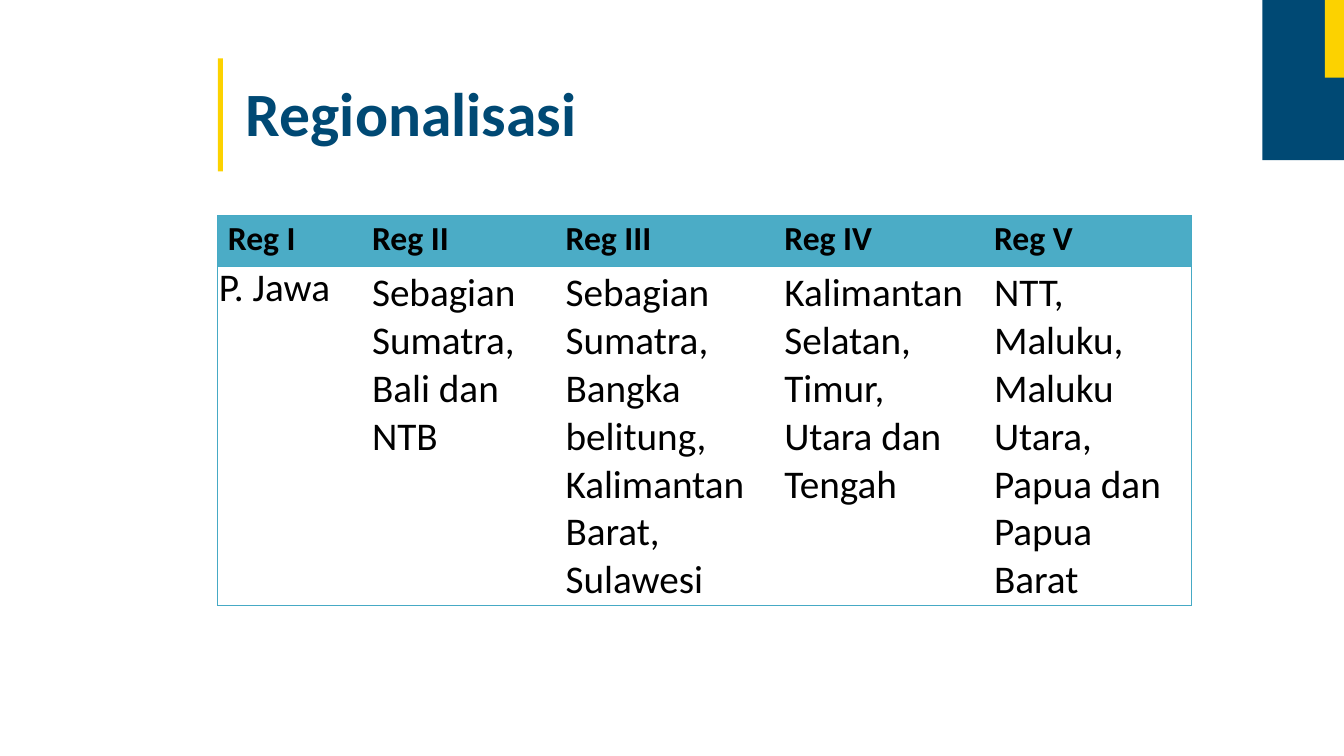
from dataclasses import dataclass

from lxml import etree
from pptx import Presentation
from pptx.dml.color import RGBColor
from pptx.enum.shapes import MSO_SHAPE
from pptx.enum.text import MSO_ANCHOR, MSO_AUTO_SIZE, PP_ALIGN
from pptx.oxml.ns import qn
from pptx.util import Inches, Pt

RECTANGLE = MSO_SHAPE.RECTANGLE
TOP = MSO_ANCHOR.TOP
LEFT = PP_ALIGN.LEFT
NO_AUTOFIT = MSO_AUTO_SIZE.NONE

FONT = "Calibri"
COLORS = {
    "navy": "004974",
    "yellow": "FCD200",
    "header": "4BACC6",
    "border": "46AAC5",
    "text": "000000",
}
COLUMN_WIDTHS = [1.43, 1.92, 2.17, 2.08, 2.06]
ROW_HEIGHTS = [0.5, 3.37]


@dataclass
class Block:
    left: float
    top: float
    width: float
    height: float
    color: str


@dataclass
class Region:
    name: str
    areas: list[str]


BLOCKS = [
    Block(2.16, 0.58, 0.05, 1.12, "yellow"),
    Block(12.52, 0, 0.81, 1.59, "navy"),
    Block(13.14, 0, 0.19, 0.77, "yellow"),
]
REGIONS = [
    Region("Reg I", ["P. Jawa"]),
    Region("Reg II", ["Sebagian Sumatra, Bali dan NTB"]),
    Region("Reg III", ["Sebagian Sumatra, Bangka belitung, Kalimantan Barat, Sulawesi"]),
    Region("Reg IV", ["Kalimantan Selatan, Timur, Utara dan Tengah"]),
    Region("Reg V", ["NTT,", "Maluku, Maluku Utara, Papua dan Papua Barat"]),
]


def rgb(color: str) -> RGBColor:
    return RGBColor.from_string(COLORS[color])


def style_paragraph(p, size: float, color: str, bold: bool) -> None:
    p.alignment = LEFT
    p.font.name = FONT
    p.font.size = Pt(size)
    p.font.bold = bold
    p.font.color.rgb = rgb(color)


def add_title(slide, text: str) -> None:
    s = slide.shapes.title
    s.left, s.top, s.width, s.height = map(Inches, (2.43, 0.73, 3.31, 0.76))
    tf = s.text_frame
    tf.text = text
    tf.auto_size = NO_AUTOFIT
    tf.vertical_anchor = TOP
    tf.margin_left = tf.margin_top = Inches(0.01)
    tf.margin_right = tf.margin_bottom = 0
    p = tf.paragraphs[0]
    style_paragraph(p, 44, "navy", True)
    p.space_before = Pt(1.1)


def add_block(slide, block: Block) -> None:
    box = map(Inches, (block.left, block.top, block.width, block.height))
    s = slide.shapes.add_shape(RECTANGLE, *box)
    s.shadow.inherit = False
    s.fill.solid()
    s.fill.fore_color.rgb = rgb(block.color)
    s.line.fill.background()


def set_borders(cell, visible: set[str]) -> None:
    """Draw the named sides (L, R, T, B) and clear the others."""
    tc_pr = cell._tc.get_or_add_tcPr()
    for i, side in enumerate("LRTB"):
        line = etree.Element(qn(f"a:ln{side}"), w=str(Pt(0.75)))
        if side in visible:
            fill = etree.SubElement(line, qn("a:solidFill"))
            etree.SubElement(fill, qn("a:srgbClr"), val=COLORS["border"])
        else:
            etree.SubElement(line, qn("a:noFill"))
        tc_pr.insert(i, line)


def fill_cell(cell, lines: list[str], header: bool) -> None:
    cell.margin_left = Inches(0.1)
    cell.margin_right = Inches(0 if header else 0.15)
    cell.margin_top = Inches(0.03)
    cell.margin_bottom = 0
    cell.vertical_anchor = TOP
    if header:
        cell.fill.solid()
        cell.fill.fore_color.rgb = rgb("header")
    else:
        cell.fill.background()
    tf = cell.text_frame
    tf.text = "\n".join(lines)
    for p in tf.paragraphs:
        style_paragraph(p, 24 if header else 28, "text", header)
    tf.paragraphs[0].space_before = Pt(2 if header else 1.8)


def add_region_table(slide) -> None:
    frame = slide.shapes.add_table(
        len(ROW_HEIGHTS), len(REGIONS), Inches(2.16), Inches(2.14),
        Inches(sum(COLUMN_WIDTHS)), Inches(sum(ROW_HEIGHTS)))
    table = frame.table
    table.horz_banding = False
    for row, height in zip(table.rows, ROW_HEIGHTS):
        row.height = Inches(height)
    for col, (region, width) in enumerate(zip(REGIONS, COLUMN_WIDTHS)):
        table.columns[col].width = Inches(width)
        outer = {0: {"L"}, len(REGIONS) - 1: {"R"}}.get(col, set())
        for row, lines in enumerate(([region.name], region.areas)):
            cell = table.cell(row, col)
            fill_cell(cell, lines, header=row == 0)
            set_borders(cell, outer | {"T", "B"})

    java = table.cell(1, 0)
    java.margin_left = Inches(0.01)
    java.margin_right = java.margin_top = 0
    p = java.text_frame.paragraphs[0]
    p.space_before = Pt(0)
    p.line_spacing = Pt(32.5)


def main() -> None:
    prs = Presentation()
    prs.slide_width, prs.slide_height = Inches(13.33), Inches(7.5)
    slide = prs.slides.add_slide(prs.slide_layouts[5])
    add_region_table(slide)
    add_title(slide, "Regionalisasi")
    for block in BLOCKS:
        add_block(slide, block)
    prs.save("out.pptx")


if __name__ == "__main__":
    main()
